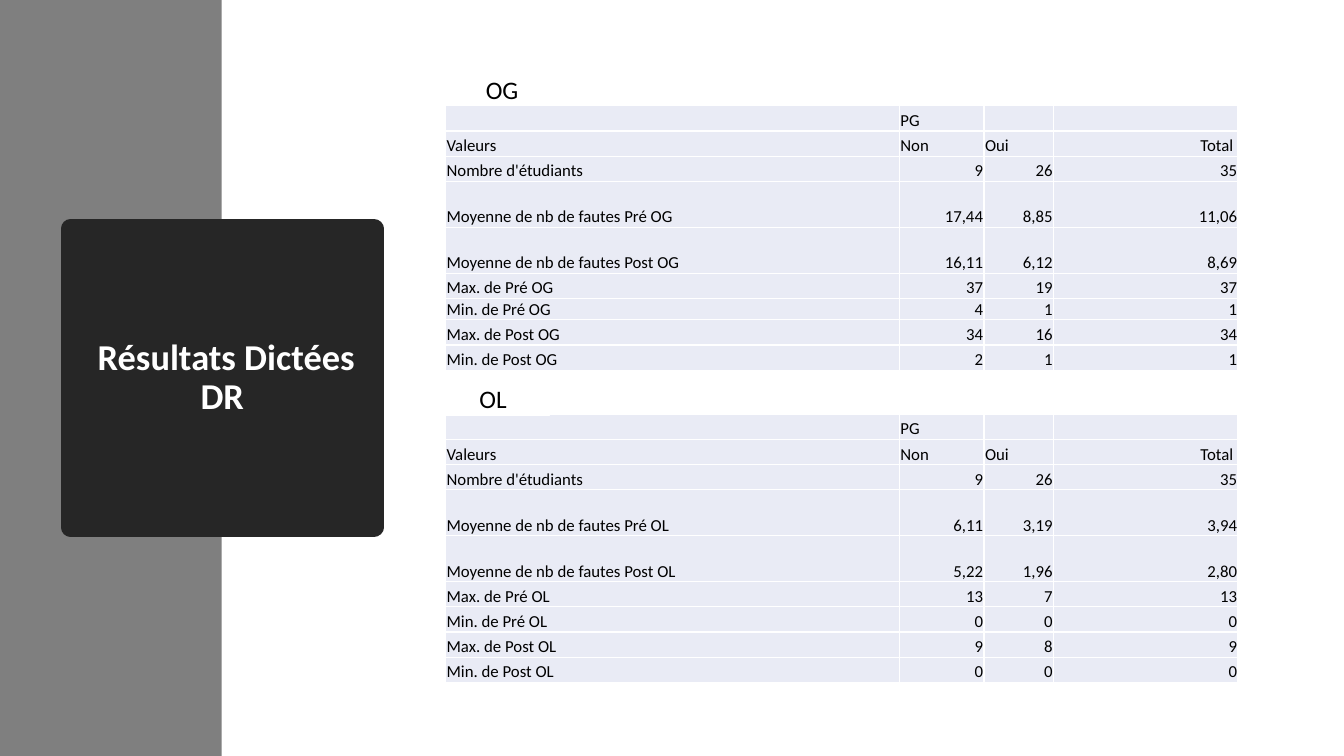
from lxml import etree
from pptx import Presentation
from pptx import util as u
from pptx.dml import color
from pptx.enum import shapes, text
from pptx.oxml import ns

PX = 4572
FONT = "Calibri"
PALE = "E9EBF5"
WHITE = "FFFFFF"
COLS = [900, 168, 138, 366]
LABELS = ["Moyenne de nb de fautes Pré", "Moyenne de nb de fautes Post",
          "Max. de Pré", "Min. de Pré", "Max. de Post", "Min. de Post"]
OG = [["17,44", "8,85", "11,06"], ["16,11", "6,12", "8,69"], ["37", "19", "37"],
      ["4", "1", "1"], ["34", "16", "34"], ["2", "1", "1"]]
OL = [["6,11", "3,19", "3,94"], ["5,22", "1,96", "2,80"], ["13", "7", "13"],
      ["0", "0", "0"], ["9", "8", "9"], ["0", "0", "0"]]


def px(*vals):
    """Turn px lengths into EMU."""
    return [u.Emu(v * PX) for v in vals]


def rgb(code):
    """Turn a hex string into a colour."""
    return color.RGBColor.from_string(code)


def apply(obj, form):
    """Set each attribute named in a dict."""
    for key, val in form.items():
        setattr(obj, key, val)


def paint(shape, fill, line=None, width=1):
    """Fill a shape and draw or hide its outline."""
    shape.fill.solid()
    shape.fill.fore_color.rgb = rgb(fill)
    if line:
        shape.line.color.rgb = rgb(line)
        shape.line.width = u.Pt(width)
    else:
        shape.line.fill.background()


def write(par, words, size, ink, **form):
    """Add one formatted run to a paragraph."""
    run = par.add_run()
    run.text = words
    apply(run.font, {"name": FONT, "size": u.Pt(size), **form})
    run.font.color.rgb = rgb(ink)


def add_bar(slide):
    """Draw the grey band behind everything."""
    bar = slide.shapes.add_shape(shapes.MSO_SHAPE.RECTANGLE, *px(0, 0, 440, 1500))
    bar.shadow.inherit = False
    paint(bar, "7F7F7F")
    slide.shapes._spTree.insert(2, bar._element)


def add_title(slide, words):
    """Place the title on its dark, round-cornered block."""
    title = slide.shapes.title
    apply(title, dict(zip(("left", "top", "width", "height"), px(140, 454, 602, 592))))
    paint(title, "262626", "262626", 13.75)
    etree.SubElement(title.line._ln, ns.qn("a:round"))
    apply(title.text_frame, {"word_wrap": True, "auto_size": text.MSO_AUTO_SIZE.NONE,
                             "vertical_anchor": text.MSO_ANCHOR.MIDDLE})
    par = title.text_frame.paragraphs[0]
    apply(par, {"alignment": text.PP_ALIGN.CENTER, "line_spacing": 0.9})
    write(par, words, 26, WHITE, bold=True)


def add_tag(slide, words, left, top):
    """Draw a white label above a table."""
    tag = slide.shapes.add_shape(shapes.MSO_SHAPE.RECTANGLE, *px(left, top, 224, 66))
    tag.shadow.inherit = False
    paint(tag, WHITE, WHITE)
    tag.text_frame.vertical_anchor = text.MSO_ANCHOR.MIDDLE
    par = tag.text_frame.paragraphs[0]
    par.alignment = text.PP_ALIGN.CENTER
    write(par, words, 18, "000000")


def edge(cell):
    """Give a cell white borders."""
    props = cell._tc.get_or_add_tcPr()
    for side in "LRTB":
        line = etree.SubElement(props, ns.qn(f"a:ln{side}"), w=str(u.Pt(1)))
        fill = etree.SubElement(line, ns.qn("a:solidFill"))
        etree.SubElement(fill, ns.qn("a:srgbClr"), val=WHITE)


def set_cell(cell, words, right):
    """Format one cell and write its text."""
    edge(cell)
    cell.fill.solid()
    cell.fill.fore_color.rgb = rgb(PALE)
    inset = u.Inches(0.01)
    apply(cell, {"margin_left": inset, "margin_right": inset, "margin_top": inset,
                 "margin_bottom": 0, "vertical_anchor": text.MSO_ANCHOR.BOTTOM})
    par = cell.text_frame.paragraphs[0]
    par.alignment = text.PP_ALIGN.RIGHT if right else text.PP_ALIGN.LEFT
    if words:
        write(par, words, 12, "000000")
    else:
        par._p.get_or_add_endParaRPr().set("sz", "1200")


def add_grid(slide, tag, vals, top, rows):
    """Build the results table of one kind of mistake."""
    data = [["", "PG", "", ""], ["Valeurs", "Non", "Oui", "Total "],
            ["Nombre d'étudiants", "9", "26", "35"]]
    data += [[f"{label} {tag}", *nums] for label, nums in zip(LABELS, vals)]
    grid = slide.shapes.add_table(len(rows), len(COLS),
                                  *px(884, top, sum(COLS), sum(rows))).table
    apply(grid, {"first_row": False, "horz_banding": False})
    for col, width in zip(grid.columns, px(*COLS)):
        col.width = width
    for row, high in zip(grid.rows, px(*rows)):
        row.height = high
    for r, line in enumerate(data):
        for c, words in enumerate(line):
            set_cell(grid.cell(r, c), words, c == 3 or (r > 1 and c > 0))


def main():
    """Build the slide and save it."""
    deck = Presentation()
    deck.slide_width, deck.slide_height = u.Inches(13.33), u.Inches(7.5)
    slide = deck.slides.add_slide(deck.slide_layouts[5])
    add_bar(slide)
    add_grid(slide, "OG", OG, 210, [50, 50, 50, 91, 91, 50, 42, 50, 50])
    add_grid(slide, "OL", OL, 822, [50, 50, 50, 91, 91, 50, 50, 50, 50])
    add_title(slide, " Résultats Dictées DR")
    add_tag(slide, "OG", 884, 144)
    add_tag(slide, "OL", 866, 758)
    deck.save("out.pptx")


if __name__ == "__main__":
    main()
